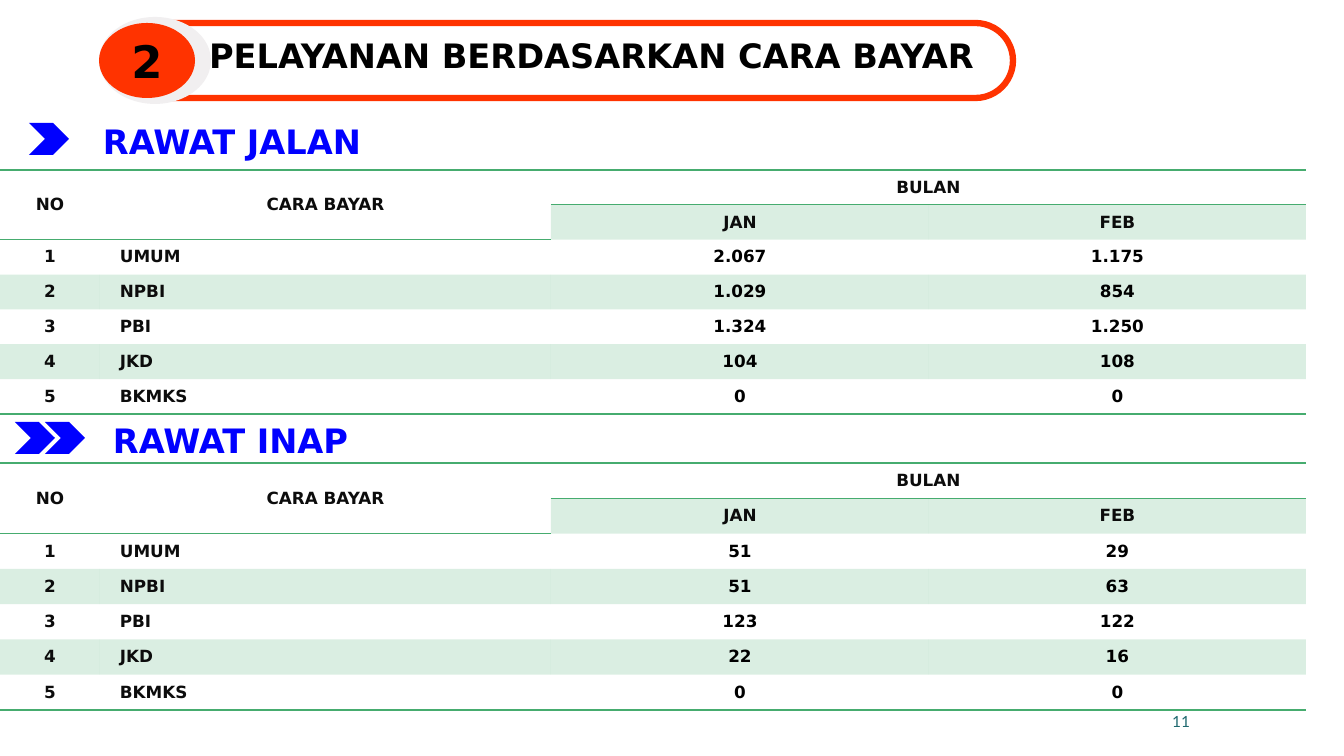
from lxml.etree import SubElement
from pptx import Presentation
from pptx.dml.color import RGBColor
from pptx.enum.shapes import MSO_SHAPE
from pptx.enum.text import MSO_ANCHOR, MSO_AUTO_SIZE, PP_ALIGN
from pptx.oxml.ns import qn
from pptx.util import Emu, Pt

SLIDE_WIDTH, SLIDE_HEIGHT = 1344, 756
EMU_PER_PX = 12192000 / SLIDE_WIDTH
COLORS = {
    "orange": "FF3300",
    "shade": "F1EFF0",
    "blue": "0000FF",
    "green": "46AC6F",
    "label": "0C0C0C",
    "black": "000000",
    "teal": "1F696F",
}
NO_STYLE = "{2D5ABB26-0587-4C30-8999-92F81FD0307C}"
COLUMN_WIDTHS = (100, 451, 378, 377)
PAYMENT_TYPES = ("UMUM", "NPBI", "PBI", "JKD", "BKMKS")
OUTPATIENTS = (
    ("2.067", "1.175"),
    ("1.029", "854"),
    ("1.324", "1.250"),
    ("104", "108"),
    ("0", "0"),
)
INPATIENTS = (("51", "29"), ("51", "63"), ("123", "122"), ("22", "16"), ("0", "0"))


def px(length):
    return Emu(round(length * EMU_PER_PX))


def box(*lengths):
    return [px(length) for length in lengths]


def rgb(color):
    return RGBColor.from_string(COLORS[color])


def write_text(frame, text, size=12, color="black", font="DejaVu Sans",
               bold=True, align=PP_ALIGN.CENTER, line_spacing=None):
    paragraph = frame.paragraphs[0]
    paragraph.alignment = align
    if line_spacing:
        paragraph.line_spacing = line_spacing
    run = paragraph.add_run()
    run.text = text
    run.font.size = Pt(size)
    run.font.name = font
    run.font.bold = bold
    run.font.color.rgb = rgb(color)


def add_figure(shapes, kind, bounds, fill=None, line=None):
    figure = shapes.add_shape(kind, *box(*bounds))
    figure.shadow.inherit = False
    if fill:
        figure.fill.solid()
        figure.fill.fore_color.rgb = rgb(fill)
    else:
        figure.fill.background()
    if line:
        figure.line.color.rgb = rgb(line)
        figure.line.width = Pt(4.5)
    else:
        figure.line.fill.background()
    return figure


def add_banner(slide, left, top, number, heading):
    shapes = slide.shapes.add_group_shape().shapes
    frame = add_figure(shapes, MSO_SHAPE.ROUNDED_RECTANGLE,
                       (left + 12, top + 6, 902, 75), line="orange")
    frame.adjustments[0] = 0.5
    add_figure(shapes, MSO_SHAPE.OVAL, (left, top, 112, 87), fill="shade")
    badge = add_figure(shapes, MSO_SHAPE.OVAL, (left, top + 6, 96, 75), fill="orange")
    badge.text_frame.vertical_anchor = MSO_ANCHOR.MIDDLE
    write_text(badge.text_frame, number, size=32)

    title = slide.shapes.title
    title.left, title.top, title.width, title.height = box(left + 59, top - 12, 867, 76)
    title.text_frame.word_wrap = True
    title.text_frame.auto_size = MSO_AUTO_SIZE.NONE
    title.text_frame.vertical_anchor = MSO_ANCHOR.BOTTOM
    write_text(title.text_frame, heading, size=24, line_spacing=0.9)


def add_section_heading(slide, bounds, heading, chevron_lefts):
    left, top, width, height = bounds
    for chevron_left in chevron_lefts:
        add_figure(slide.shapes, MSO_SHAPE.CHEVRON,
                   (chevron_left, top + 7, 40, 32), fill="blue")
    label = slide.shapes.add_textbox(*box(left, top, width, height)).text_frame
    label.word_wrap = False
    label.auto_size = MSO_AUTO_SIZE.SHAPE_TO_FIT_TEXT
    write_text(label, heading, size=24, color="blue")


def set_borders(cell, sides):
    properties = cell._tc.get_or_add_tcPr()
    for side in sides:
        border = SubElement(properties, qn(f"a:ln{side}"), w=str(Pt(1)))
        fill = SubElement(border, qn("a:solidFill"))
        SubElement(fill, qn("a:srgbClr"), val=COLORS["green"])


def set_band(cell, banded):
    if not banded:
        cell.fill.background()
        return
    cell.fill.solid()
    cell.fill.fore_color.rgb = rgb("green")
    for tint in cell._tc.tcPr.find(qn("a:solidFill")):
        SubElement(tint, qn("a:alpha"), val="20000")


def border_sides(row, column, last_row):
    if row == 0:
        return "TB"
    if row == last_row or (row == 1 and column < 2):
        return "B"
    return ""


def add_payment_table(slide, top, height, visits):
    content = [("NO", "CARA BAYAR", "BULAN", ""), ("", "", "JAN", "FEB")]
    content += [(str(number), payment, *counts) for number, (payment, counts)
                in enumerate(zip(PAYMENT_TYPES, visits), 1)]
    holder = slide.shapes.add_table(len(content), len(COLUMN_WIDTHS),
                                    *box(0, top, sum(COLUMN_WIDTHS), height))
    table = holder.table
    table.first_row = table.horz_banding = False
    for style in holder.element.iter(qn("a:tableStyleId")):
        style.text = NO_STYLE
    for column, width in zip(table.columns, COLUMN_WIDTHS):
        column.width = px(width)
    for row in table.rows:
        row.height = px(height / len(content))
    table.cell(0, 0).merge(table.cell(1, 0))
    table.cell(0, 1).merge(table.cell(1, 1))
    table.cell(0, 2).merge(table.cell(0, 3))

    for row, values in enumerate(content):
        for column, value in enumerate(values):
            cell = table.cell(row, column)
            is_count = row > 1 and column > 1
            cell.vertical_anchor = MSO_ANCHOR.MIDDLE
            cell.margin_left = cell.margin_right = px(0 if is_count else 20)
            cell.margin_top = cell.margin_bottom = px(0 if is_count else 7)
            set_borders(cell, border_sides(row, column, len(content) - 1))
            set_band(cell, row % 2 == 1 and not cell.is_spanned)
            if value:
                is_payment = row > 1 and column == 1
                write_text(cell.text_frame, value,
                           color="black" if is_count else "label",
                           align=PP_ALIGN.LEFT if is_payment else PP_ALIGN.CENTER)


def add_page_number(slide, bounds, number):
    page = slide.shapes.add_textbox(*box(*bounds)).text_frame
    page.word_wrap = True
    page.vertical_anchor = MSO_ANCHOR.MIDDLE
    write_text(page, number, size=11, color="teal", font="Lato",
               bold=False, align=PP_ALIGN.RIGHT)


def main():
    presentation = Presentation()
    presentation.slide_width, presentation.slide_height = box(SLIDE_WIDTH, SLIDE_HEIGHT)
    slide = presentation.slides.add_slide(presentation.slide_layouts[5])
    add_banner(slide, 99, 17, "2", "PELAYANAN BERDASARKAN CARA BAYAR")
    add_section_heading(slide, (85, 116, 294, 50), "RAWAT JALAN", (29,))
    add_payment_table(slide, 170, 244, OUTPATIENTS)
    add_section_heading(slide, (95, 415, 271, 50), "RAWAT INAP", (15, 45))
    add_payment_table(slide, 463, 247, INPATIENTS)
    add_page_number(slide, (887, 701, 313, 40), "11")
    presentation.save("out.pptx")


if __name__ == "__main__":
    main()
